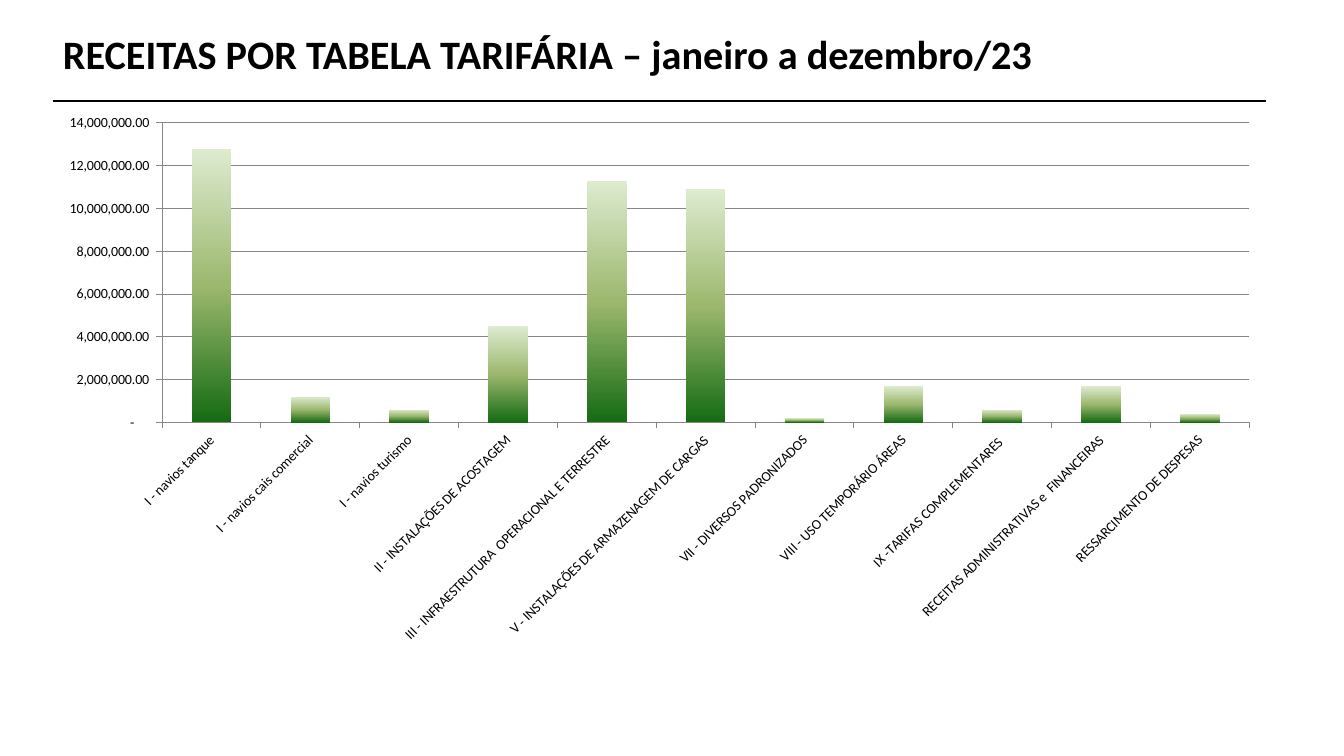
from lxml import etree
from pptx import Presentation
from pptx.chart.data import CategoryChartData
from pptx.dml.color import RGBColor
from pptx.enum.chart import XL_CHART_TYPE, XL_TICK_MARK
from pptx.enum.shapes import MSO_CONNECTOR
from pptx.enum.text import MSO_ANCHOR
from pptx.oxml import parse_xml
from pptx.oxml.ns import nsdecls, qn
from pptx.util import Pt

COLUMN = XL_CHART_TYPE.COLUMN_CLUSTERED
OUTSIDE = XL_TICK_MARK.OUTSIDE
STRAIGHT = MSO_CONNECTOR.STRAIGHT
TOP = MSO_ANCHOR.TOP

SCALE = 914400 / 100.8
FONT = "Calibri"
COLORS = {"text": "000000", "grid": "868686",
          "light": "DDEBCF", "mid": "9CB86E", "dark": "156B13"}
FORMAT = '_-* #,##0.00_-;\\-* #,##0.00_-;_-* "-"??_-'

REVENUE = [
    ("I - navios tanque", 12800000),
    ("I - navios cais comercial", 1200000),
    ("I - navios turismo", 600000),
    ("II - INSTALAÇÕES DE ACOSTAGEM", 4500000),
    ("III - INFRAESTRUTURA  OPERACIONAL E TERRESTRE", 11300000),
    ("V - INSTALAÇÕES DE ARMAZENAGEM DE CARGAS", 10900000),
    ("VII - DIVERSOS PADRONIZADOS", 200000),
    ("VIII - USO TEMPORÁRIO ÁREAS", 1700000),
    ("IX -TARIFAS COMPLEMENTARES ", 600000),
    ("RECEITAS ADMINISTRATIVAS e  FINANCEIRAS", 1700000),
    ("RESSARCIMENTO DE DESPESAS", 400000),
]


def px(n):
    return round(n * SCALE)


def rgb(name):
    return RGBColor.from_string(COLORS[name])


def style(font, size, bold=False):
    font.name, font.size, font.bold = FONT, Pt(size), bold
    font.color.rgb = rgb("text")


def add_title(slide, text, x, y, w, h):
    frame = slide.shapes.add_textbox(px(x), px(y), px(w), px(h)).text_frame
    frame.word_wrap = True
    frame.vertical_anchor = TOP
    frame.margin_top = px(6)
    para = frame.paragraphs[0]
    para.line_spacing = 0.9
    run = para.add_run()
    run.text = text
    style(run.font, 28.8, True)


def add_rule(slide, x1, x2, y):
    rule = slide.shapes.add_connector(STRAIGHT, px(x1), px(y), px(x2), px(y))
    rule.line.color.rgb = rgb("text")
    rule.line.width = Pt(1.5)
    etree.SubElement(rule._element.spPr, qn("a:effectLst"))


def fill_bars(series):
    stops = "".join(
        f'<a:gs pos="{pos}"><a:srgbClr val="{COLORS[name]}"/></a:gs>'
        for pos, name in ((0, "light"), (50000, "mid"), (100000, "dark")))
    props = series._element.get_or_add_spPr()
    props.append(parse_xml(
        f'<a:gradFill {nsdecls("a")}><a:gsLst>{stops}</a:gsLst>'
        '<a:lin ang="5400000" scaled="0"/></a:gradFill>'))


def style_axis(axis):
    axis.major_tick_mark = OUTSIDE
    axis.format.line.color.rgb = rgb("grid")
    style(axis.tick_labels.font, 10)


def add_bars(slide, rows, x, y, w, h):
    data = CategoryChartData()
    data.categories = [name for name, _ in rows]
    data.add_series("Series 1", [value for _, value in rows])
    chart = slide.shapes.add_chart(
        COLUMN, px(x), px(y), px(w), px(h), data).chart
    chart.has_legend = chart.has_title = False
    style(chart.font, 10)
    plot = chart.plots[0]
    plot.gap_width = 150
    plot.vary_by_categories = False
    fill_bars(plot.series[0])

    # Axes and grid
    cats, vals = chart.category_axis, chart.value_axis
    style_axis(cats)
    style_axis(vals)
    cats._element.txPr.bodyPr.set("rot", "-2700000")
    vals.minimum_scale, vals.maximum_scale = 0, 14000000
    vals.major_unit = 2000000
    vals.major_gridlines.format.line.color.rgb = rgb("grid")
    vals.tick_labels.number_format = FORMAT
    vals.tick_labels.number_format_is_linked = False


def main():
    deck = Presentation()
    deck.slide_width, deck.slide_height = px(1344), px(756)
    slide = deck.slides.add_slide(deck.slide_layouts[6])
    # Heading
    add_rule(slide, 53, 1266, 101)
    add_title(slide, "RECEITAS POR TABELA TARIFÁRIA – janeiro a dezembro/23",
              53, 29, 1029, 71)
    # Revenue by tariff table
    add_bars(slide, REVENUE, 42, 104, 1232, 550)
    deck.save("out.pptx")


if __name__ == "__main__":
    main()
